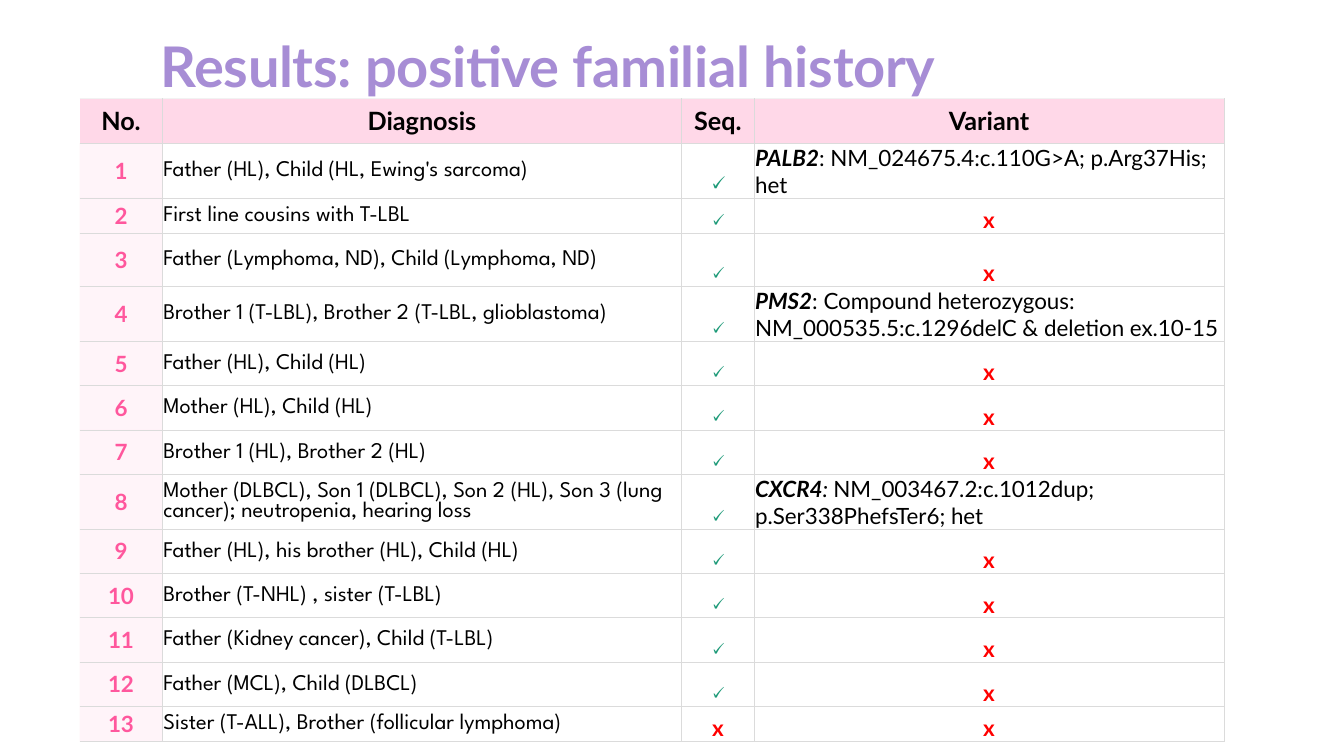
from dataclasses import dataclass, replace

from lxml.etree import SubElement as Sub
from pptx import Presentation
from pptx.dml.color import RGBColor as Rgb
from pptx.enum.text import MSO_ANCHOR as Anchor, MSO_AUTO_SIZE as Auto, PP_ALIGN as Align
from pptx.oxml.ns import qn
from pptx.util import Inches, Pt


@dataclass(frozen=True)
class Theme:
    sans: str = "Lato"
    body: str = "League Spartan"
    mark: str = "Calibri"
    black: str = "000000"
    white: str = "FFFFFF"
    pink: str = "FF579D"
    head: str = "FFD8E8"
    tint: str = "FFB8D6"
    green: str = "1D9A78"
    red: str = "FF0000"
    rule: str = "DBDBDB"
    edge: str = "F2F2F2"
    fade: tuple = ((0, "FF579D"), (30, "A78DD5"), (70, "63B8FF"), (100, "33EDFF"))
    big: int = 40
    mid: int = 18
    small: int = 16


@dataclass(frozen=True)
class Look:
    """How one kind of table cell is set."""
    face: str
    size: int
    color: str
    bold: bool = False
    align: Align = Align.CENTER
    anchor: Anchor = Anchor.BOTTOM
    fill: str = Theme.white
    alpha: int = 100
    pad: tuple = (0.01, 0.01, 0.01, 0)


T = Theme()
WIDE = (0.08, 0.04, 0.08, 0.04)
HEAD = Look(T.sans, T.mid, T.black, True, anchor=Anchor.MIDDLE, fill=T.head, pad=WIDE)
NUM = replace(HEAD, size=T.small, color=T.pink, fill=T.tint, alpha=14)
DIAG = Look(T.body, T.small, T.black, align=Align.LEFT, anchor=Anchor.MIDDLE)
TICK = Look(T.mark, T.small, T.green, True)
CROSS = Look(T.sans, T.small, T.red, True)
GENE = Look(T.sans, T.small, T.black, align=Align.LEFT)

HEADS = ("No.", "Diagnosis", "Seq.", "Variant")
COLS = (0.82, 5.15, 0.72, 4.66)

# A variant is a list of (text, bold, italic) runs; None means none was found.
PALB2 = [("PALB2", True, True), (": NM_024675.4:c.110G>A; p.Arg37His; het", False, False)]
PMS2 = [("PMS2", True, True),
        (": Compound heterozygous: NM_000535.5:c.1296delC & deletion ex.10-15", False, False)]
CXCR4 = [("CXCR4", True, True), (": ", False, True),
         ("NM_003467.2:c.1012dup; p.Ser338PhefsTer6; het", False, False)]

# Row height, diagnosis, sequenced, variant
CASES = (
    (0.53, "Father (HL), Child (HL, Ewing's sarcoma)", True, PALB2),
    (0.35, "First line cousins with T-LBL", True, None),
    (0.53, "Father (Lymphoma, ND), Child (Lymphoma, ND)", True, None),
    (0.54, "Brother 1 (T-LBL), Brother 2 (T-LBL, glioblastoma)", True, PMS2),
    (0.44, "Father (HL), Child (HL)", True, None),
    (0.44, "Mother (HL), Child (HL)", True, None),
    (0.44, "Brother 1 (HL), Brother 2 (HL)", True, None),
    (0.54, "Mother (DLBCL), Son 1 (DLBCL), Son 2 (HL), Son 3 (lung cancer); "
           "neutropenia, hearing loss", True, CXCR4),
    (0.44, "Father (HL), his brother (HL), Child (HL)", True, None),
    (0.44, "Brother (T-NHL) , sister (T-LBL)", True, None),
    (0.44, "Father (Kidney cancer), Child (T-LBL)", True, None),
    (0.44, "Father (MCL), Child (DLBCL)", True, None),
    (0.34, "Sister (T-ALL), Brother (follicular lymphoma)", False, None),
)


class Page:
    """Holds the theme and the current slide."""

    def __init__(self, deck, theme):
        self.theme = theme
        self.slide = deck.slides.add_slide(deck.slide_layouts[6])

    def title(self, text, x, y, w, h):
        box = self.slide.shapes.add_textbox(*map(Inches, (x, y, w, h)))
        frame = box.text_frame
        frame.word_wrap = False
        frame.auto_size = Auto.SHAPE_TO_FIT_TEXT
        frame.vertical_anchor = Anchor.BOTTOM
        frame.margin_left = frame.margin_right = frame.margin_top = frame.margin_bottom = 0
        para = frame.paragraphs[0]
        para.font.name, para.font.size, para.font.bold = self.theme.sans, Pt(self.theme.big), True
        run = para.add_run()
        run.text = text
        self.fade(run)

    def fade(self, run):
        """Give the run the theme gradient and slightly tight spacing."""
        props = run.font._element
        props.set("spc", "-20")
        grad = Sub(props, qn("a:gradFill"))
        stops = Sub(grad, qn("a:gsLst"))
        for pos, color in self.theme.fade:
            stop = Sub(stops, qn("a:gs"), pos=str(pos * 1000))
            Sub(stop, qn("a:srgbClr"), val=color)
        Sub(grad, qn("a:lin"), ang="0", scaled="0")

    def table(self, x, y, cols, rows):
        """Draw rows given as (height, [(runs, look), ...])."""
        size = sum(cols), sum(high for high, _ in rows)
        grid = self.slide.shapes.add_table(
            len(rows), len(cols), *map(Inches, (x, y, *size))).table
        grid.first_row = grid.horz_banding = False
        for col, wide in zip(grid.columns, cols):
            col.width = Inches(wide)
        for r, (high, cells) in enumerate(rows):
            grid.rows[r].height = Inches(high)
            for c, (runs, look) in enumerate(cells):
                rule = self.theme.rule
                self.border(grid.cell(r, c), {
                    "L": rule if c else None, "R": rule,
                    "T": rule if r else self.theme.edge, "B": rule})
                self.cell(grid.cell(r, c), runs, look)

    def border(self, cell, sides):
        props = cell._tc.get_or_add_tcPr()
        for side, color in sides.items():
            line = Sub(props, qn("a:ln" + side), w=str(Pt(0.5)))
            if color:
                Sub(Sub(line, qn("a:solidFill")), qn("a:srgbClr"), val=color)
            else:
                Sub(line, qn("a:noFill"))

    def cell(self, cell, runs, look):
        cell.fill.solid()
        cell.fill.fore_color.rgb = Rgb.from_string(look.fill)
        if look.alpha < 100:
            tone = cell._tc.tcPr.find(qn("a:solidFill")).find(qn("a:srgbClr"))
            Sub(tone, qn("a:alpha"), val=str(look.alpha * 1000))
        cell.vertical_anchor = look.anchor
        (cell.margin_left, cell.margin_top,
         cell.margin_right, cell.margin_bottom) = map(Inches, look.pad)
        para = cell.text_frame.paragraphs[0]
        para.alignment = look.align
        font = para.font
        font.name, font.size, font.bold = look.face, Pt(look.size), look.bold
        font.color.rgb = Rgb.from_string(look.color)
        if isinstance(runs, str):
            para.add_run().text = runs
            return
        for text, bold, slant in runs:
            run = para.add_run()
            run.text = text
            run.font.bold, run.font.italic = bold, slant


def main():
    deck = Presentation()
    deck.slide_width, deck.slide_height = Inches(13.33), Inches(7.5)
    page = Page(deck, T)
    page.title("Results: positive familial history", 1.59, 0.31, 7.92, 0.67)

    tick, cross = ("🗸", TICK), ("x", CROSS)
    rows = [(0.44, [(head, HEAD) for head in HEADS])]
    for num, (high, diag, done, gene) in enumerate(CASES, 1):
        mark = tick if done else cross
        if num == 1:
            mark = ("🗸", replace(TICK, size=T.mid))
        rows.append((high, [(str(num), NUM), (diag, DIAG), mark,
                            (gene, GENE) if gene else cross]))
    page.table(0.79, 0.98, COLS, rows)
    deck.save("out.pptx")


if __name__ == "__main__":
    main()
